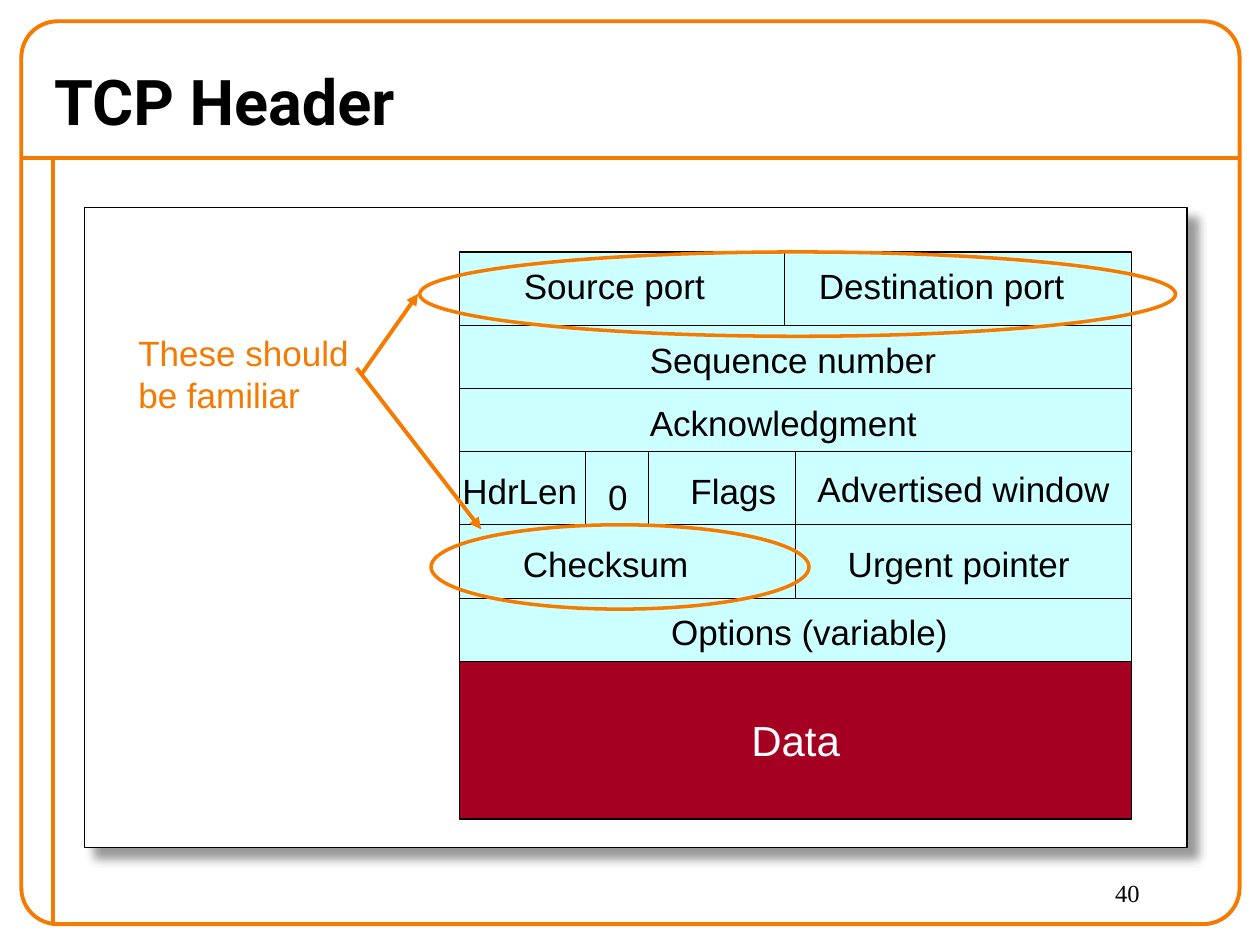
from dataclasses import dataclass

from lxml import etree
from pptx import Presentation
from pptx.dml.color import RGBColor
from pptx.enum.shapes import MSO_CONNECTOR, MSO_SHAPE
from pptx.enum.text import MSO_ANCHOR, PP_ALIGN
from pptx.oxml.ns import qn
from pptx.util import Cm, Pt

RECT, ROUND, OVAL = MSO_SHAPE.RECTANGLE, MSO_SHAPE.ROUNDED_RECTANGLE, MSO_SHAPE.OVAL
STRAIGHT = MSO_CONNECTOR.STRAIGHT
TOP, MIDDLE = MSO_ANCHOR.TOP, MSO_ANCHOR.MIDDLE
LEFT, CENTER = PP_ALIGN.LEFT, PP_ALIGN.CENTER


@dataclass(frozen=True)
class Theme:
    ink: str = "000000"
    paper: str = "FFFFFF"
    accent: str = "F47A00"
    field: str = "CCFFFF"
    data: str = "A50021"
    shade: str = "777777"
    body: str = "Arial"
    head: str = "Roboto"
    serif: str = "Times New Roman"
    title: int = 36
    large: int = 24
    text: int = 20
    small: int = 14
    thin: float = 0.75
    ring: float = 2
    thick: float = 2.25


THEME = Theme()


def write(frame, text, size=THEME.text, font=THEME.body, color=THEME.ink,
          bold=False, align=LEFT, anchor=TOP, wrap=True):
    """Fill a text frame, one paragraph per line of text."""
    frame.word_wrap = wrap
    frame.vertical_anchor = anchor
    for i, line in enumerate(text.split("\n")):
        para = frame.add_paragraph() if i else frame.paragraphs[0]
        para.alignment = align
        run = para.add_run()
        run.text = line
        run.font.size, run.font.name, run.font.bold = Pt(size), font, bold
        run.font.color.rgb = RGBColor.from_string(color)


class Painter:
    """Draws on one slide; all lengths are centimetres."""

    def __init__(self, slide, theme):
        self.shapes = slide.shapes
        self.theme = theme

    def paint(self, shape, fill):
        if fill:
            shape.fill.solid()
            shape.fill.fore_color.rgb = RGBColor.from_string(fill)
        else:
            shape.fill.background()

    def stroke(self, line, color, width):
        line.color.rgb = RGBColor.from_string(color)
        line.width = Pt(width)

    def shape(self, kind, box, fill=None, color=THEME.ink, width=THEME.thin):
        shape = self.shapes.add_shape(kind, *map(Cm, box))
        shape.shadow.inherit = False
        self.paint(shape, fill)
        self.stroke(shape.line, color, width)
        return shape

    def label(self, text, box, fill=None, **style):
        shape = self.shapes.add_textbox(*map(Cm, box))
        self.paint(shape, fill)
        write(shape.text_frame, text, **style)

    def line(self, start, end, color=THEME.accent, width=THEME.thick, arrow=False):
        line = self.shapes.add_connector(STRAIGHT, *map(Cm, start + end))
        self.stroke(line.line, color, width)
        if arrow:
            etree.SubElement(line.line._get_or_add_ln(), qn("a:tailEnd"), type="triangle")
        etree.SubElement(line._element.spPr, qn("a:effectLst"))

    def shadow(self, shape):
        """Cast a soft shadow down and to the right."""
        effects = shape._element.spPr.find(qn("a:effectLst"))
        outer = etree.SubElement(
            effects, qn("a:outerShdw"), blurRad=str(Pt(5)), dist=str(Pt(8.5)),
            dir="2700000", algn="tl", rotWithShape="0")
        color = etree.SubElement(outer, qn("a:srgbClr"), val=self.theme.shade)
        etree.SubElement(color, qn("a:alpha"), val="75000")


def draw_frame(pen):
    pen.line((0.43, 3.18), (24.97, 3.18))
    pen.line((1.07, 3.18), (1.07, 18.62))
    border = pen.shape(ROUND, (0.43, 0.43, 24.56, 18.2),
                       color=THEME.accent, width=THEME.thick)
    border.adjustments[0] = 0.04
    pen.label("40", (22.23, 17.58, 2.54, 1.07), size=THEME.small, font=THEME.serif)
    panel = pen.shape(RECT, (1.7, 4.19, 22.23, 12.9), THEME.paper)
    pen.shadow(panel)
    pen.label("TCP Header", (0.84, 1.07, 22.4, 1.9), size=THEME.title,
              font=THEME.head, bold=True, anchor=MIDDLE)


def draw_header(pen):
    left, full, half = 9.27, 13.54, 6.77
    tall, low = 1.48, 1.27
    # Each row: height, cell widths, labels as (text, left, drop, width)
    rows = [
        (tall, [6.55, 6.99], [("Source port", 10.31, 0.13, 4.3),
                              ("Destination port", 16.26, 0.13, 5.6)]),
        (low, [full], [("Sequence number", 12.85, 0.13, 6.6)]),
        (low, [full], [("Acknowledgment", 12.85, 0.13, 6.1)]),
        (tall, [half, half], [("Advertised window", 16.23, 0.2, 6.5),
                              ("HdrLen", 9.07, 0.23, 2.97),
                              ("Flags", 13.67, 0.25, 2.3),
                              ("0", 12.01, 0.36, 0.91)]),
        (tall, [half, half], [("Checksum", 10.29, 0.23, 3.95),
                              ("Urgent pointer", 16.84, 0.23, 5.1)]),
        (low, [full], [("Options (variable)", 13.28, 0.13, 6.4)]),
    ]
    top = 5.08
    for high, widths, labels in rows:
        x = left
        for wide in widths:
            pen.shape(RECT, (x, top, wide, high), THEME.field)
            x += wide
        for text, x, drop, wide in labels:
            fill = None if text == "HdrLen" else THEME.field
            pen.label(text, (x, top + drop, wide, 1.09), fill, wrap=False)
        top += high
    for x in (11.81, 13.08):
        pen.line((x, 9.1), (x, 10.58), THEME.ink, THEME.thin)
    data = pen.shape(RECT, (left, top, full, 3.18), THEME.data)
    write(data.text_frame, "Data", size=THEME.large, color=THEME.paper,
          align=CENTER, anchor=MIDDLE, wrap=False)


def draw_notes(pen):
    pen.label("These should\nbe familiar", (2.54, 6.55, 4.75, 1.96),
              color=THEME.accent, wrap=False)
    for box in ((8.46, 5.08, 15.24, 1.7), (8.69, 10.58, 7.62, 1.7)):
        pen.shape(OVAL, box, color=THEME.accent, width=THEME.ring)
    pen.line((7.29, 7.54), (8.43, 5.92), arrow=True)
    pen.line((7.19, 7.42), (9.7, 10.67), arrow=True)


def main():
    deck = Presentation()
    deck.slide_width, deck.slide_height = Cm(25.4), Cm(19.05)
    pen = Painter(deck.slides.add_slide(deck.slide_layouts[6]), THEME)
    draw_frame(pen)
    draw_header(pen)
    draw_notes(pen)
    deck.save("out.pptx")


if __name__ == "__main__":
    main()
